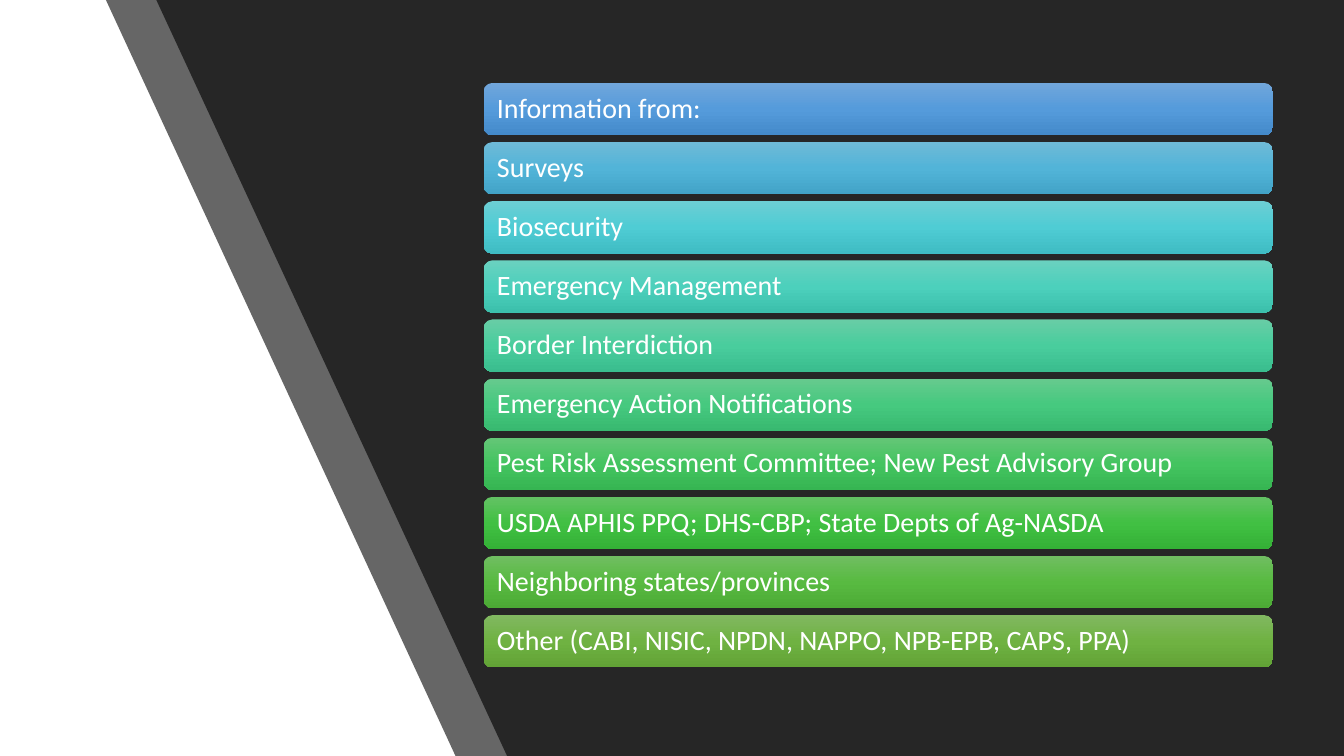
from copy import deepcopy
from dataclasses import dataclass

from lxml import etree
from pptx import Presentation
from pptx.dml.color import RGBColor
from pptx.enum import shapes, text
from pptx.oxml import ns
from pptx.util import Cm, Pt


@dataclass(frozen=True)
class Theme:
    back: str = "000000"
    white: str = "FFFFFF"
    dark: str = "262626"
    font: str = "Calibri"
    size: int = 20


THEME = Theme()
WIDE, HIGH = 33.87, 19.05
LEFT, TOP, SPAN, TALL, STEP = 12.19, 2.09, 19.89, 1.32, 1.49

ITEMS = [
    ("Information from:", ("71A6DB", "559BDB", "448ACA")),
    ("Surveys", ("6FBAD7", "52B4D8", "42A3C7")),
    ("Biosecurity", ("6CCED4", "4FCCD4", "3FBCC3")),
    ("Emergency Management", ("6AD1C0", "4CD0BC", "3CC0AC")),
    ("Border Interdiction", ("68CDA6", "49CD9D", "3ABD8E")),
    ("Emergency Action Notifications", ("66CA8E", "46C97F", "38B970")),
    ("Pest Risk Assessment Committee; New Pest Advisory Group",
     ("64C677", "44C460", "36B552")),
    ("USDA APHIS PPQ; DHS-CBP; State Depts of Ag-NASDA",
     ("63C264", "41C043", "34B136")),
    ("Neighboring states/provinces", ("70BE61", "58BA41", "4CAA35")),
    ("Other (CABI, NISIC, NPDN, NAPPO, NPB-EPB, CAPS, PPA)",
     ("81B861", "6FB242", "62A336")),
]


def paint(shape, color, alpha=100):
    shape.shadow.inherit = False
    shape.line.fill.background()
    shape.fill.solid()
    shape.fill.fore_color.rgb = RGBColor.from_string(color)
    if alpha < 100:
        tone = next(shape.element.iter(ns.qn("a:srgbClr")))
        etree.SubElement(tone, ns.qn("a:alpha"), val=str(alpha * 1000))


def blend(shape, colors):
    shape.shadow.inherit = False
    shape.line.fill.background()
    shape.fill.gradient()
    shape.fill.gradient_angle = 270
    stops = next(shape.element.iter(ns.qn("a:gsLst")))
    stops.append(deepcopy(stops[0]))
    for i, (stop, color) in enumerate(zip(shape.fill.gradient_stops, colors)):
        stop.position = i / 2
        stop.color.rgb = RGBColor.from_string(color)


def add_panel(slide, top, foot, alpha=100):
    pen = slide.shapes.build_freeform(Cm(WIDE), Cm(HIGH))
    pen.add_line_segments(
        [(Cm(foot), Cm(HIGH)), (Cm(top), 0), (Cm(WIDE), 0)], close=True)
    paint(pen.convert_to_shape(), THEME.dark, alpha)


def add_bar(slide, row, label, colors):
    bar = slide.shapes.add_shape(
        shapes.MSO_SHAPE.ROUNDED_RECTANGLE,
        Cm(LEFT), Cm(TOP + row * STEP), Cm(SPAN), Cm(TALL))
    blend(bar, colors)
    frame = bar.text_frame
    frame.text = label
    frame.word_wrap = True
    frame.vertical_anchor = text.MSO_ANCHOR.MIDDLE
    frame.margin_left = frame.margin_right = Cm(0.27)
    frame.margin_top = frame.margin_bottom = Cm(0.2)
    line = frame.paragraphs[0]
    line.alignment = text.PP_ALIGN.LEFT
    line.line_spacing = 0.9
    font = line.runs[0].font
    font.name = THEME.font
    font.size = Pt(THEME.size)
    font.color.rgb = RGBColor.from_string(THEME.white)


def main():
    deck = Presentation()
    deck.slide_width, deck.slide_height = Cm(WIDE), Cm(HIGH)
    slide = deck.slides.add_slide(deck.slide_layouts.get_by_name("Blank"))
    slide.background.fill.solid()
    slide.background.fill.fore_color.rgb = RGBColor.from_string(THEME.back)
    sheet = slide.shapes.add_shape(
        shapes.MSO_SHAPE.RECTANGLE, 0, 0, Cm(WIDE), Cm(HIGH))
    paint(sheet, THEME.white)
    add_panel(slide, 2.67, 11.48, 70)
    add_panel(slide, 3.94, 12.78)
    for row, (label, colors) in enumerate(ITEMS):
        add_bar(slide, row, label, colors)
    deck.save("out.pptx")


if __name__ == "__main__":
    main()
